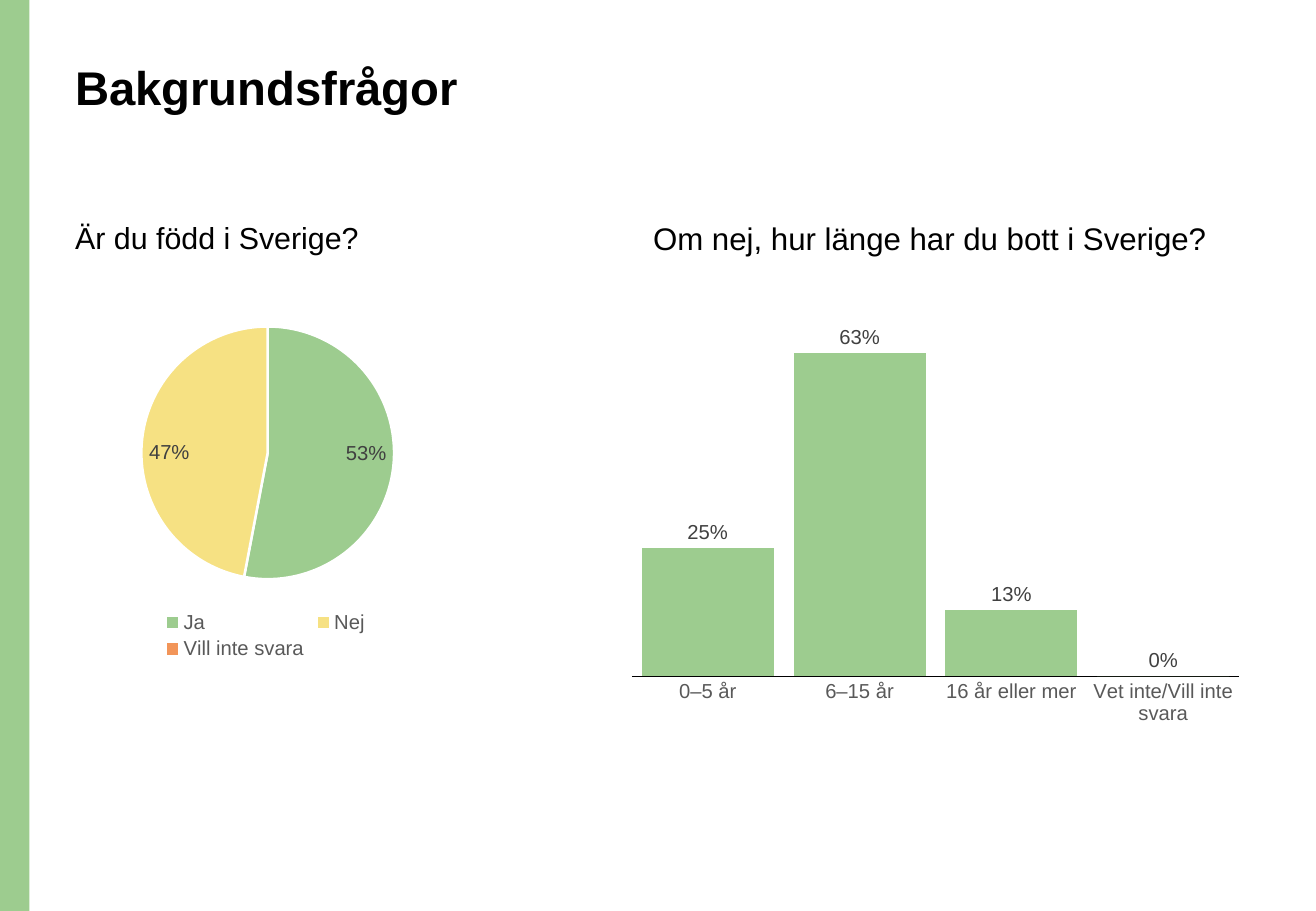
from lxml.etree import SubElement
from pptx import Presentation
from pptx.chart.data import CategoryChartData
from pptx.dml.color import RGBColor
from pptx.enum.chart import (XL_CHART_TYPE, XL_LABEL_POSITION, XL_LEGEND_POSITION,
                             XL_TICK_MARK)
from pptx.enum.shapes import MSO_SHAPE
from pptx.enum.text import MSO_ANCHOR
from pptx.oxml.ns import qn
from pptx.util import Pt

COLORS = {"green": "9DCC8F", "yellow": "F6E183", "orange": "F29559",
          "black": "000000", "label": "404040", "grey": "595959", "white": "FFFFFF"}


class SlideBuilder:
    font_name = "Arial"

    def __init__(self, prs):
        self.s = prs.slides.add_slide(prs.slide_layouts[6])

    def color(self, name):
        return RGBColor.from_string(COLORS[name])

    def style(self, font, size, color="black", bold=False):
        values = {"name": self.font_name, "size": Pt(size), "bold": bold}
        for key, value in values.items():
            setattr(font, key, value)
        font.color.rgb = self.color(color)

    def paint(self, fmt, color):
        fmt.fill.solid()
        fmt.fill.fore_color.rgb = self.color(color)

    def bar(self, box, color):
        sp = self.s.shapes.add_shape(MSO_SHAPE.RECTANGLE, *map(Pt, box))
        sp.shadow.inherit = False
        self.paint(sp, color)
        sp.line.fill.background()

    def text(self, box, text, size, bold=False):
        tf = self.s.shapes.add_textbox(*map(Pt, box)).text_frame
        tf.word_wrap = True
        tf.vertical_anchor = MSO_ANCHOR.TOP
        p = tf.paragraphs[0]
        p.line_spacing = 0.9
        r = p.add_run()
        r.text = text
        self.style(r.font, size, bold=bold)

    def chart(self, kind, box, values, layout, label_position, number_format):
        data = CategoryChartData()
        data.categories = list(values)
        data.add_series("Series 1", list(values.values()))
        chart = self.s.shapes.add_chart(kind, *map(Pt, box), data).chart
        chart.has_title = False
        chart.has_legend = False
        self.style(chart.font, 10)
        plot = chart.plots[0]
        plot.has_data_labels = True
        labels = plot.data_labels
        formats = {"show_value": True, "show_percentage": False,
                   "number_format": number_format,
                   "number_format_is_linked": False, "position": label_position}
        for key, value in formats.items():
            setattr(labels, key, value)
        self.style(labels.font, 12, "label")
        self.place_plot(chart, layout)
        return chart

    def place_plot(self, chart, layout):
        """Fix the inner plot area as fractions of the chart."""
        area = chart.plots[0]._element.getparent()
        for old in area.findall(qn("c:layout")):
            area.remove(old)
        holder = SubElement(area, qn("c:layout"))
        area.insert(0, holder)
        manual = SubElement(holder, qn("c:manualLayout"))
        settings = [("layoutTarget", "inner"), ("xMode", "edge"), ("yMode", "edge")]
        for tag, value in settings + list(zip("xywh", layout)):
            SubElement(manual, qn("c:" + tag)).set("val", str(value))

    def pie(self, box, values, colors, layout):
        chart = self.chart(XL_CHART_TYPE.PIE, box, values, layout,
                           XL_LABEL_POSITION.INSIDE_END, '[<0.01]"";[>0.01]0%')
        chart.plots[0].vary_by_categories = True
        chart.has_legend = True
        chart.legend.position = XL_LEGEND_POSITION.BOTTOM
        chart.legend.include_in_layout = False
        self.style(chart.legend.font, 12, "grey")
        for i, color in enumerate(colors):
            fmt = chart.series[0].points[i].format
            self.paint(fmt, color)
            fmt.line.color.rgb = self.color("white")
            fmt.line.width = Pt(1.5)

    def columns(self, box, values, color, layout):
        chart = self.chart(XL_CHART_TYPE.COLUMN_CLUSTERED, box, values, layout,
                           XL_LABEL_POSITION.OUTSIDE_END, "0%")
        plot = chart.plots[0]
        for key, value in {"gap_width": 15, "overlap": -27,
                           "vary_by_categories": False}.items():
            setattr(plot, key, value)
        self.paint(chart.series[0].format, color)
        value_axis, axis = chart.value_axis, chart.category_axis
        for key, value in {"minimum_scale": 0, "maximum_scale": 0.7, "visible": False,
                           "has_major_gridlines": False}.items():
            setattr(value_axis, key, value)
        axis.major_tick_mark = axis.minor_tick_mark = XL_TICK_MARK.NONE
        axis.format.line.color.rgb = self.color("black")
        axis.format.line.width = Pt(0.75)
        self.style(axis.tick_labels.font, 12, "grey")


def main():
    prs = Presentation()
    prs.slide_width, prs.slide_height = Pt(780), Pt(540)
    slide = SlideBuilder(prs)
    left = 37.5

    # Side bar and headings
    slide.bar((0, 0, 17.5, 540), "green")
    slide.text((left, 34.5, 672.5, 73.5), "Bakgrundsfrågor", 28, bold=True)
    slide.text((left, 129, 330, 33), "Är du född i Sverige?", 18)
    slide.text((380, 129, 362, 42), "Om nej, hur länge har du bott i Sverige?", 18.5)

    # Born in Sweden
    slide.pie((left, 183, 240, 211), {"Ja": 0.53, "Nej": 0.47, "Vill inte svara": 0},
              ("green", "yellow", "orange"), (0.19, 0.05, 0.63, 0.71))

    # Years in Sweden
    slide.columns((367, 183, 375, 250.5),
                  {"0–5 år": 0.25, "6–15 år": 0.63, "16 år eller mer": 0.13,
                   "Vet inte/Vill inte svara": 0},
                  "green", (0.02, 0.02, 0.96, 0.85))

    prs.save("out.pptx")


if __name__ == "__main__":
    main()
